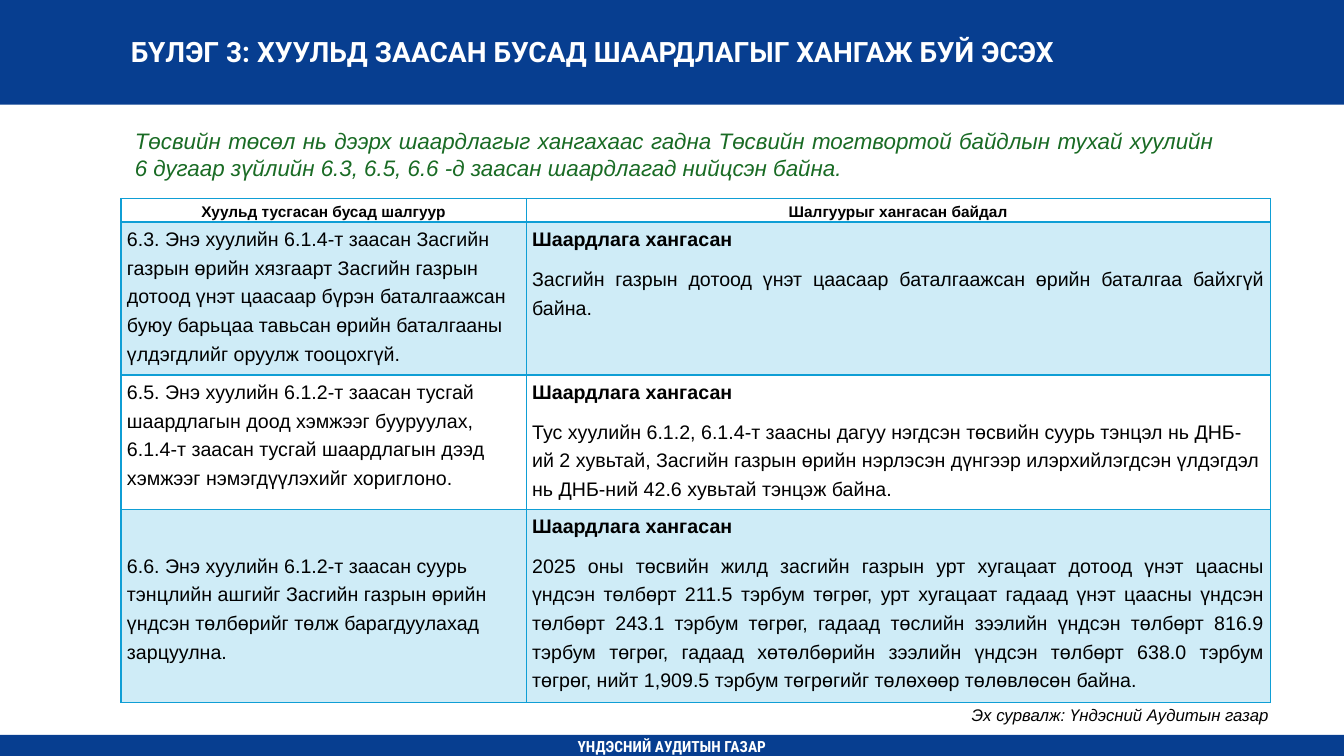
from dataclasses import dataclass

from lxml import etree
from pptx import Presentation
from pptx.dml.color import RGBColor
from pptx.enum.shapes import MSO_SHAPE
from pptx.enum.text import MSO_ANCHOR, PP_ALIGN
from pptx.oxml.ns import qn
from pptx.slide import Slide
from pptx.table import _Cell
from pptx.util import Cm, Pt

RECTANGLE = MSO_SHAPE.RECTANGLE
TOP, MIDDLE = MSO_ANCHOR.TOP, MSO_ANCHOR.MIDDLE
LEFT, CENTER = PP_ALIGN.LEFT, PP_ALIGN.CENTER
RIGHT, JUSTIFY = PP_ALIGN.RIGHT, PP_ALIGN.JUSTIFY

COLORS = {
    "navy": "073E90",
    "white": "FFFFFF",
    "black": "000000",
    "green": "196B24",
    "border": "0F9ED5",
    "band": "CFECF7",
}
SLIDE_WIDTH, SLIDE_HEIGHT = 33.87, 19.05
COLUMN_WIDTHS = (10.21, 18.75)
HEADER_HEIGHT = 0.6
HEADERS = ("Хуульд тусгасан бусад шалгуур", "Шалгуурыг хангасан байдал")
VERDICT = "Шаардлага хангасан"


@dataclass(frozen=True)
class Bar:
    top: float
    height: float


@dataclass(frozen=True)
class Label:
    text: str
    box: tuple[float, float, float, float]
    font: str
    size: int
    color: str
    align: PP_ALIGN = LEFT
    anchor: MSO_ANCHOR = TOP
    bold: bool = False
    italic: bool = False
    indent: float = 0


@dataclass(frozen=True)
class Criterion:
    rule: str
    finding: str
    height: float
    align: PP_ALIGN = JUSTIFY
    rule_anchor: MSO_ANCHOR = TOP
    fill: str | None = "band"


BARS = (Bar(0, 2.64), Bar(18.52, 0.53))

LABELS = (
    Label("ҮНДЭСНИЙ АУДИТЫН ГАЗАР", (0, 18.44, SLIDE_WIDTH, 0.74),
          "Roboto Condensed", 11, "white", CENTER, MIDDLE, bold=True),
    Label("БҮЛЭГ 3: ХУУЛЬД ЗААСАН БУСАД ШААРДЛАГЫГ ХАНГАЖ БУЙ ЭСЭХ",
          (3.05, 0.74, 25.45, 1.12), "Roboto", 20, "white", LEFT, MIDDLE, bold=True),
    Label("Төсвийн төсөл нь дээрх шаардлагыг хангахаас гадна Төсвийн тогтвортой "
          "байдлын тухай хуулийн 6 дугаар зүйлийн 6.3, 6.5, 6.6 -д заасан "
          "шаардлагад нийцсэн байна.",
          (1.88, 3.07, 28.96, 1.63), "Arial", 16, "green", JUSTIFY,
          italic=True, indent=1.27),
    Label("Эх сурвалж: Үндэсний Аудитын газар", (15.29, 17.63, 16.94, 0.76),
          "Arial", 12, "black", RIGHT, italic=True, indent=1.27),
)

CRITERIA = (
    Criterion(
        "6.3. Энэ хуулийн 6.1.4-т заасан Засгийн газрын өрийн хязгаарт Засгийн "
        "газрын дотоод үнэт цаасаар бүрэн баталгаажсан буюу барьцаа тавьсан өрийн "
        "баталгааны үлдэгдлийг оруулж тооцохгүй.",
        "Засгийн газрын дотоод үнэт цаасаар баталгаажсан өрийн баталгаа байхгүй байна.",
        3.85),
    Criterion(
        "6.5. Энэ хуулийн 6.1.2-т заасан тусгай шаардлагын доод хэмжээг бууруулах, "
        "6.1.4-т заасан тусгай шаардлагын дээд хэмжээг нэмэгдүүлэхийг хориглоно.",
        "Тус хуулийн 6.1.2, 6.1.4-т заасны дагуу нэгдсэн төсвийн суурь тэнцэл нь "
        "ДНБ-ий 2 хувьтай, Засгийн газрын өрийн нэрлэсэн дүнгээр илэрхийлэгдсэн "
        "үлдэгдэл нь ДНБ-ний 42.6 хувьтай тэнцэж байна.",
        3.38, align=LEFT, fill=None),
    Criterion(
        "6.6. Энэ хуулийн 6.1.2-т заасан суурь тэнцлийн ашгийг Засгийн газрын өрийн "
        "үндсэн төлбөрийг төлж барагдуулахад зарцуулна.",
        "2025 оны төсвийн жилд засгийн газрын урт хугацаат дотоод үнэт цаасны "
        "үндсэн төлбөрт 211.5 тэрбум төгрөг, урт хугацаат гадаад үнэт цаасны үндсэн "
        "төлбөрт 243.1 тэрбум төгрөг, гадаад төслийн зээлийн үндсэн төлбөрт 816.9 "
        "тэрбум төгрөг, гадаад хөтөлбөрийн зээлийн үндсэн төлбөрт 638.0 тэрбум "
        "төгрөг, нийт 1,909.5 тэрбум төгрөгийг төлөхөөр төлөвлөсөн байна.",
        4.88, rule_anchor=MIDDLE),
)


def rgb(name: str) -> RGBColor:
    return RGBColor.from_string(COLORS[name])


def draw_bar(slide: Slide, bar: Bar) -> None:
    shape = slide.shapes.add_shape(
        RECTANGLE, Cm(0), Cm(bar.top), Cm(SLIDE_WIDTH), Cm(bar.height))
    shape.shadow.inherit = False
    shape.fill.solid()
    shape.fill.fore_color.rgb = rgb("navy")
    shape.line.fill.background()


def draw_label(slide: Slide, label: Label) -> None:
    shape = slide.shapes.add_textbox(*(Cm(length) for length in label.box))
    frame = shape.text_frame
    frame.word_wrap = True
    frame.vertical_anchor = label.anchor
    paragraph = frame.paragraphs[0]
    paragraph.text = label.text
    paragraph.alignment = label.align
    if label.indent:
        paragraph._p.get_or_add_pPr().set("marL", str(Cm(label.indent)))
    font = paragraph.font
    font.name, font.size = label.font, Pt(label.size)
    font.bold, font.italic = label.bold, label.italic
    font.color.rgb = rgb(label.color)


def set_borders(cell: _Cell, top: int, bottom: int) -> None:
    properties = cell._tc.get_or_add_tcPr()
    sides = {"lnL": 1, "lnR": 1, "lnT": top, "lnB": bottom}
    for position, (side, width) in enumerate(sides.items()):
        line = etree.Element(qn(f"a:{side}"), w=str(Pt(width)))
        fill = etree.SubElement(line, qn("a:solidFill"))
        etree.SubElement(fill, qn("a:srgbClr"), val=COLORS["border"])
        properties.insert(position, line)


def fill_cell(cell: _Cell, lines: list[tuple[str, bool, PP_ALIGN]], size: int,
              fill: str | None, top: int = 1, bottom: int = 1) -> None:
    cell.margin_left = cell.margin_right = Cm(0.15)
    cell.margin_top = cell.margin_bottom = Cm(0)
    if fill:
        cell.fill.solid()
        cell.fill.fore_color.rgb = rgb(fill)
    else:
        cell.fill.background()
    set_borders(cell, top, bottom)
    frame = cell.text_frame
    for index, (text, bold, align) in enumerate(lines):
        paragraph = frame.add_paragraph() if index else frame.paragraphs[0]
        paragraph.text = text
        paragraph.alignment = align
        paragraph.line_spacing = 1.3
        paragraph.space_after = Pt(8)
        font = paragraph.font
        font.name, font.size, font.bold = "Arial", Pt(size), bold
        font.color.rgb = rgb("black")


def draw_table(slide: Slide) -> None:
    heights = [HEADER_HEIGHT, *(criterion.height for criterion in CRITERIA)]
    table = slide.shapes.add_table(
        len(heights), len(COLUMN_WIDTHS), Cm(3.05), Cm(5),
        Cm(sum(COLUMN_WIDTHS)), Cm(sum(heights))).table
    table.first_row = table.horz_banding = False
    for column, width in zip(table.columns, COLUMN_WIDTHS):
        column.width = Cm(width)
    for row, height in zip(table.rows, heights):
        row.height = Cm(height)

    for column, header in enumerate(HEADERS):
        fill_cell(table.cell(0, column), [(header, True, CENTER)], 11, None, bottom=2)
    for row, criterion in enumerate(CRITERIA, start=1):
        rule, finding = table.cell(row, 0), table.cell(row, 1)
        top = 2 if row == 1 else 1
        fill_cell(rule, [(criterion.rule, False, LEFT)], 14, criterion.fill, top)
        rule.vertical_anchor = criterion.rule_anchor
        fill_cell(finding, [(VERDICT, True, LEFT),
                            (criterion.finding, False, criterion.align)],
                  14, criterion.fill, top)


def main() -> None:
    presentation = Presentation()
    presentation.slide_width = Cm(SLIDE_WIDTH)
    presentation.slide_height = Cm(SLIDE_HEIGHT)
    slide = presentation.slides.add_slide(presentation.slide_layouts[6])
    # Header and footer bands
    for bar in BARS:
        draw_bar(slide, bar)
    # Criteria table
    draw_table(slide)
    # Title, introduction, footer and source line
    for label in LABELS:
        draw_label(slide, label)
    presentation.save("out.pptx")


if __name__ == "__main__":
    main()
